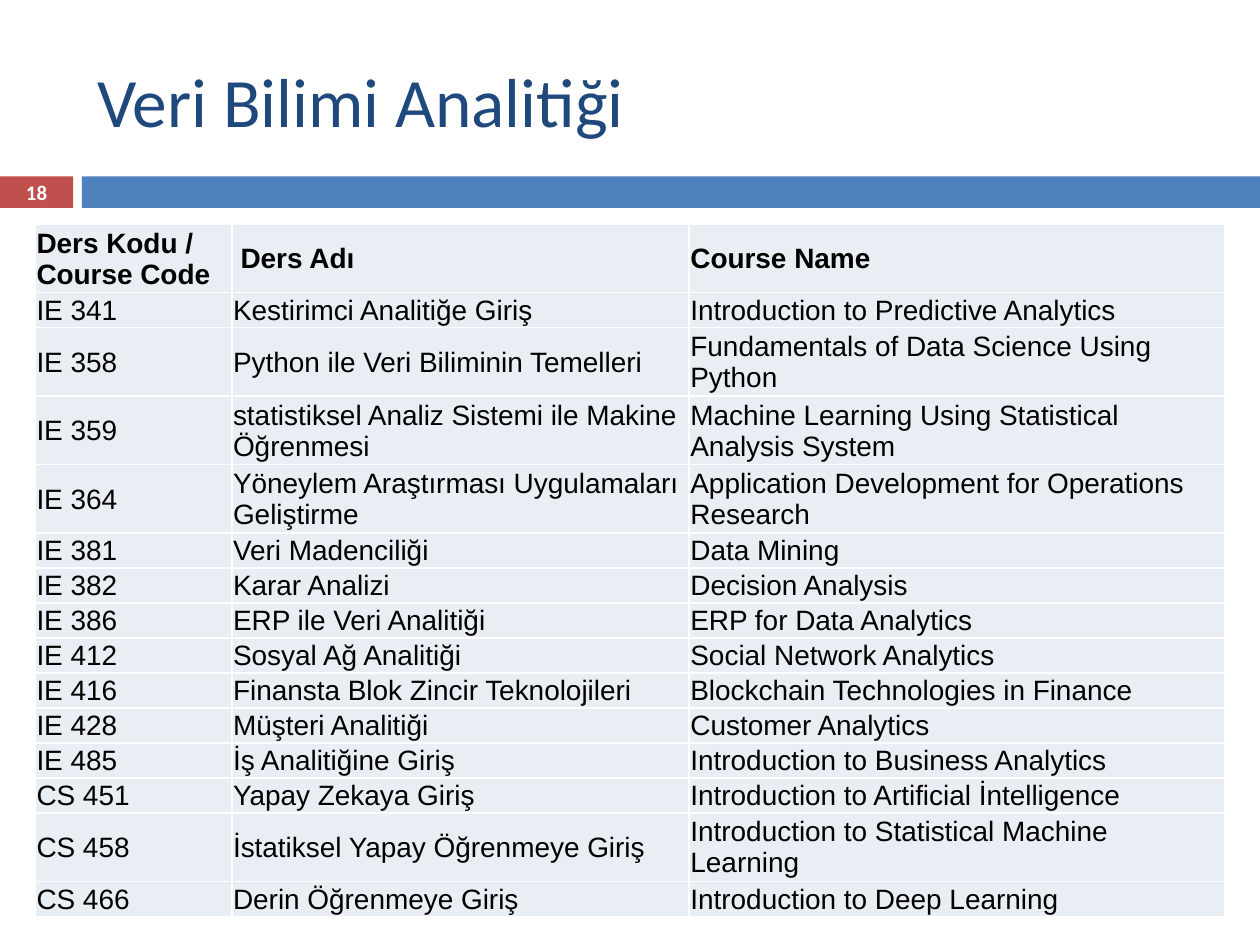
import pptx
import pptx.dml.color
import pptx.enum.shapes
import pptx.enum.text
import pptx.oxml
import pptx.oxml.ns
import pptx.util
from pptx.util import Inches

ALIGN = pptx.enum.text.PP_ALIGN
MIDDLE = pptx.enum.text.MSO_ANCHOR.MIDDLE
ROW_HEIGHT, TALL_ROW_HEIGHT = pptx.util.Pt(20), pptx.util.Pt(39)
TALL_ROWS = (0, 3, 4)

COURSES = [
    ("Ders Kodu / Course Code", "Ders Adı", "Course Name"),
    ("IE 341", "Kestirimci Analitiğe Giriş", "Introduction to Predictive Analytics"),
    ("IE 358", "Python ile Veri Biliminin Temelleri",
     "Fundamentals of Data Science Using Python"),
    ("IE 359", "statistiksel Analiz Sistemi ile Makine Öğrenmesi",
     "Machine Learning Using Statistical Analysis System"),
    ("IE 364", "Yöneylem Araştırması Uygulamaları Geliştirme",
     "Application Development for Operations Research"),
    ("IE 381", "Veri Madenciliği", "Data Mining"),
    ("IE 382", "Karar Analizi", "Decision Analysis"),
    ("IE 386", "ERP ile Veri Analitiği", "ERP for Data Analytics"),
    ("IE 412", "Sosyal Ağ Analitiği", "Social Network Analytics"),
    ("IE 416", "Finansta Blok Zincir Teknolojileri", "Blockchain Technologies in Finance"),
    ("IE 428", "Müşteri Analitiği", "Customer Analytics"),
    ("IE 485", "İş Analitiğine Giriş", "Introduction to Business Analytics"),
    ("CS 451", "Yapay Zekaya Giriş", "Introduction to Artificial İntelligence"),
    ("CS 458", "İstatiksel Yapay Öğrenmeye Giriş",
     "Introduction to Statistical Machine Learning"),
    ("CS 466", "Derin Öğrenmeye Giriş", "Introduction to Deep Learning"),
]


def rgb(value):
    return pptx.dml.color.RGBColor.from_string(value)


def set_attributes(target, values):
    for name, value in values.items():
        setattr(target, name, value)


class CourseSlide:
    heading_font = "Calibri"
    table_font = "Arial"
    title_color = "1F497D"
    number_color = "C0504D"
    band_color = "4F81BD"
    cell_color = "E9EDF4"
    white = "FFFFFF"
    black = "000000"

    def __init__(self, slide):
        self.slide = slide

    def fill_text(self, frame, text, font, size, color, bold=False, align=ALIGN.LEFT):
        paragraph = frame.paragraphs[0]
        paragraph.text = text
        paragraph.alignment = align
        set_attributes(paragraph.font,
                       {"name": font, "size": pptx.util.Pt(size), "bold": bold})
        paragraph.font.color.rgb = rgb(color)

    def title(self, text, left, top, width, height):
        heading = self.slide.shapes.title
        set_attributes(heading, {"left": left, "top": top, "width": width, "height": height})
        set_attributes(heading.text_frame, {"vertical_anchor": MIDDLE, "word_wrap": True})
        self.fill_text(heading.text_frame, text, self.heading_font, 39.6, self.title_color)

    def bar(self, color, left, top, width, height):
        block = self.slide.shapes.add_shape(
            pptx.enum.shapes.MSO_SHAPE.RECTANGLE, left, top, width, height)
        block.shadow.inherit = False
        block.fill.solid()
        block.fill.fore_color.rgb = rgb(color)
        block.line.fill.background()

    def page_number(self, text, left, top, width, height):
        frame = self.slide.shapes.add_textbox(left, top, width, height).text_frame
        set_attributes(frame, {"vertical_anchor": MIDDLE, "word_wrap": True,
                               "margin_top": 0, "margin_bottom": 0})
        self.fill_text(frame, text, self.heading_font, 11.9, self.white, True, ALIGN.CENTER)

    def cell_borders(self, cell):
        properties = cell._tc.get_or_add_tcPr()
        for side in ("lnL", "lnR", "lnT", "lnB"):
            properties.append(pptx.oxml.parse_xml(
                f'<a:{side} {pptx.oxml.ns.nsdecls("a")} w="12700"><a:solidFill>'
                f'<a:srgbClr val="{self.white}"/></a:solidFill></a:{side}>'))

    def table(self, rows, column_widths, left, top):
        heights = [TALL_ROW_HEIGHT if index in TALL_ROWS else ROW_HEIGHT
                   for index in range(len(rows))]
        grid = self.slide.shapes.add_table(
            len(rows), len(column_widths), left, top, sum(column_widths), sum(heights)).table
        grid.horz_banding = False
        for column, width in zip(grid.columns, column_widths):
            column.width = width
        for row_index, (row, height, texts) in enumerate(zip(grid.rows, heights, rows)):
            row.height = height
            for column_index, (cell, text) in enumerate(zip(row.cells, texts)):
                indented = row_index == 0 and column_index == 1
                set_attributes(cell, {
                    "vertical_anchor": MIDDLE,
                    "margin_left": Inches(0.07 if indented else 0.01),
                    "margin_right": Inches(0.01),
                    "margin_top": Inches(0.01),
                    "margin_bottom": 0,
                })
                self.cell_borders(cell)
                cell.fill.solid()
                cell.fill.fore_color.rgb = rgb(self.cell_color)
                self.fill_text(cell.text_frame, text, self.table_font, 16, self.black,
                               bold=row_index == 0)


def main():
    deck = pptx.Presentation()
    deck.slide_width, deck.slide_height = Inches(10), Inches(7.5)
    courses = CourseSlide(deck.slides.add_slide(deck.slide_layouts[5]))
    courses.bar(courses.number_color, 0, Inches(1.4), Inches(0.58), Inches(0.25))
    courses.bar(courses.band_color, Inches(0.65), Inches(1.4), Inches(9.35), Inches(0.25))
    courses.title("Veri Bilimi Analitiği",
                  Inches(0.67), Inches(0.25), Inches(8.92), Inches(1.08))
    courses.page_number("18", 0, Inches(1.39), Inches(0.58), Inches(0.27))
    courses.table(COURSES, [Inches(1.56), Inches(3.63), Inches(4.25)],
                  Inches(0.28), Inches(1.78))
    deck.save("out.pptx")


if __name__ == "__main__":
    main()
